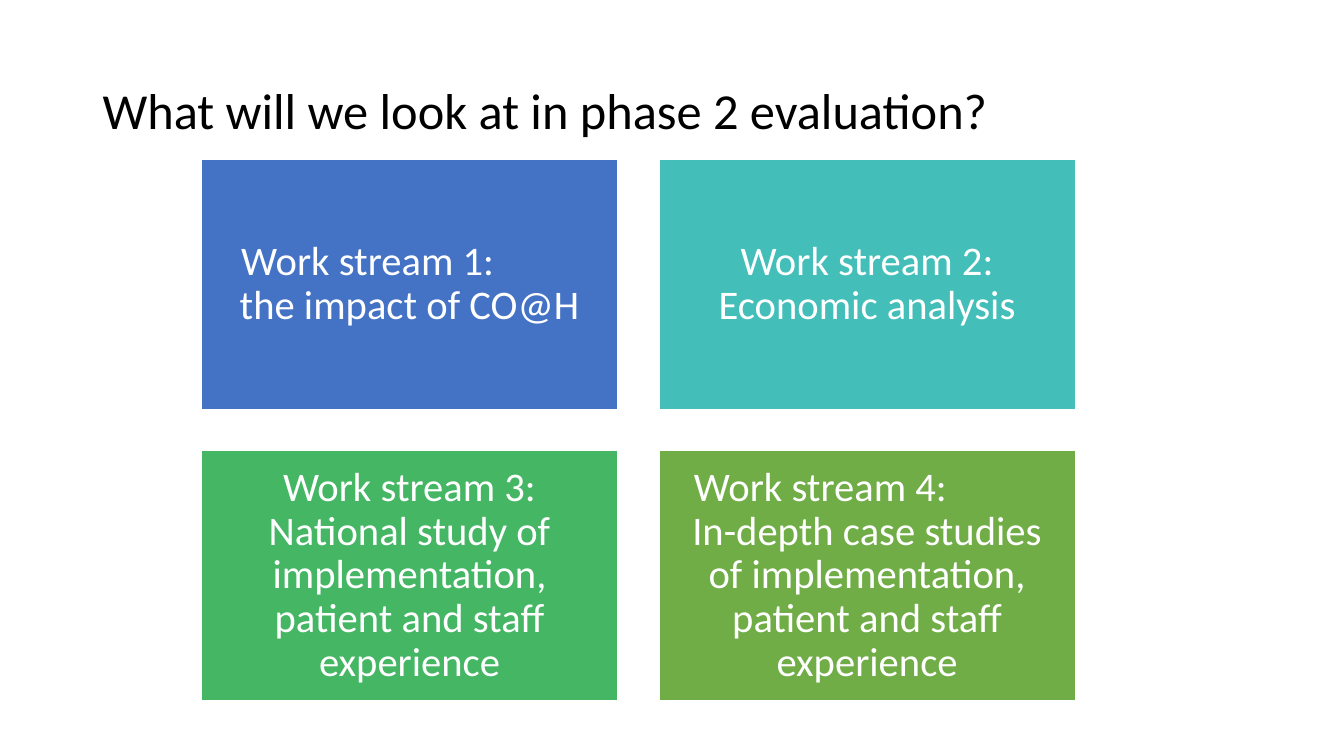
from dataclasses import dataclass

from pptx import Presentation
from pptx import util as u
from pptx.dml.color import RGBColor
from pptx.enum import shapes, text


@dataclass(frozen=True)
class Theme:
    font: str = "Calibri"
    title_size: int = 36
    box_size: int = 29
    line_spacing: float = 0.9
    ink: str = "000000"
    white: str = "FFFFFF"
    streams: tuple = ("4472C4", "43BEB9", "45B664", "70AD47")


def write(paragraph, words, *, font, size, color, align, spacing, indent=0):
    """Fill a paragraph with one formatted run; indent is in centimetres."""
    paragraph.alignment = align
    paragraph.line_spacing = spacing
    if indent:
        paragraph._p.get_or_add_pPr().set("marL", str(u.Cm(indent)))
    span = paragraph.add_run()
    span.text = words
    span.font.name = font
    span.font.size = u.Pt(size)
    span.font.color.rgb = RGBColor.from_string(color)


class SlideBuilder:
    def __init__(self, deck, theme):
        self.theme = theme
        self.page = deck.slides.add_slide(deck.slide_layouts[5])

    def title(self, words, left, top, width, height):
        box = self.page.shapes.title
        box.left, box.top = u.Cm(left), u.Cm(top)
        box.width, box.height = u.Cm(width), u.Cm(height)
        box.text_frame.vertical_anchor = text.MSO_ANCHOR.MIDDLE
        write(box.text_frame.paragraphs[0], words, font=self.theme.font,
              size=self.theme.title_size, color=self.theme.ink,
              align=text.PP_ALIGN.LEFT, spacing=self.theme.line_spacing)

    def box(self, lines, fill, left, top, width, height, heading_indent=None):
        """Add a filled box; heading_indent sets its first line flush left."""
        box = self.page.shapes.add_shape(
            shapes.MSO_SHAPE.RECTANGLE,
            u.Cm(left), u.Cm(top), u.Cm(width), u.Cm(height))
        box.shadow.inherit = False
        box.fill.solid()
        box.fill.fore_color.rgb = RGBColor.from_string(fill)
        box.line.color.rgb = RGBColor.from_string(self.theme.white)
        box.line.width = u.Pt(1)
        frame = box.text_frame
        frame.word_wrap = True
        frame.vertical_anchor = text.MSO_ANCHOR.MIDDLE
        frame.margin_left = frame.margin_right = u.Cm(0.3)
        frame.margin_top = frame.margin_bottom = u.Cm(0.3)
        for index, words in enumerate(lines):
            paragraph = frame.add_paragraph() if index else frame.paragraphs[0]
            flush = index == 0 and heading_indent is not None
            write(paragraph, words, font=self.theme.font,
                  size=self.theme.box_size, color=self.theme.white,
                  align=text.PP_ALIGN.LEFT if flush else text.PP_ALIGN.CENTER,
                  spacing=self.theme.line_spacing,
                  indent=heading_indent if flush else 0)


STREAMS = [
    (["Work stream 1:", "the impact of CO@H"], 0.7),
    (["Work stream 2: Economic analysis"], None),
    (["Work stream 3: National study of implementation, "
      "patient and staff experience"], None),
    (["Work stream 4:", "In-depth case studies of implementation, "
      "patient and staff experience"], 0.58),
]
GRID_LEFT, GRID_TOP = 5.08, 4.02
BOX_WIDTH, BOX_HEIGHT, GAP = 10.49, 6.3, 1.04


def main():
    deck = Presentation()
    deck.slide_width, deck.slide_height = u.Cm(33.87), u.Cm(19.05)
    theme = Theme()
    builder = SlideBuilder(deck, theme)
    builder.title("What will we look at in phase 2 evaluation?",
                  2.33, 1.01, 29.21, 3.68)
    for index, (lines, indent) in enumerate(STREAMS):
        row, column = divmod(index, 2)
        builder.box(lines, theme.streams[index],
                    GRID_LEFT + column * (BOX_WIDTH + GAP),
                    GRID_TOP + row * (BOX_HEIGHT + GAP),
                    BOX_WIDTH, BOX_HEIGHT, heading_indent=indent)
    deck.save("out.pptx")


if __name__ == "__main__":
    main()
